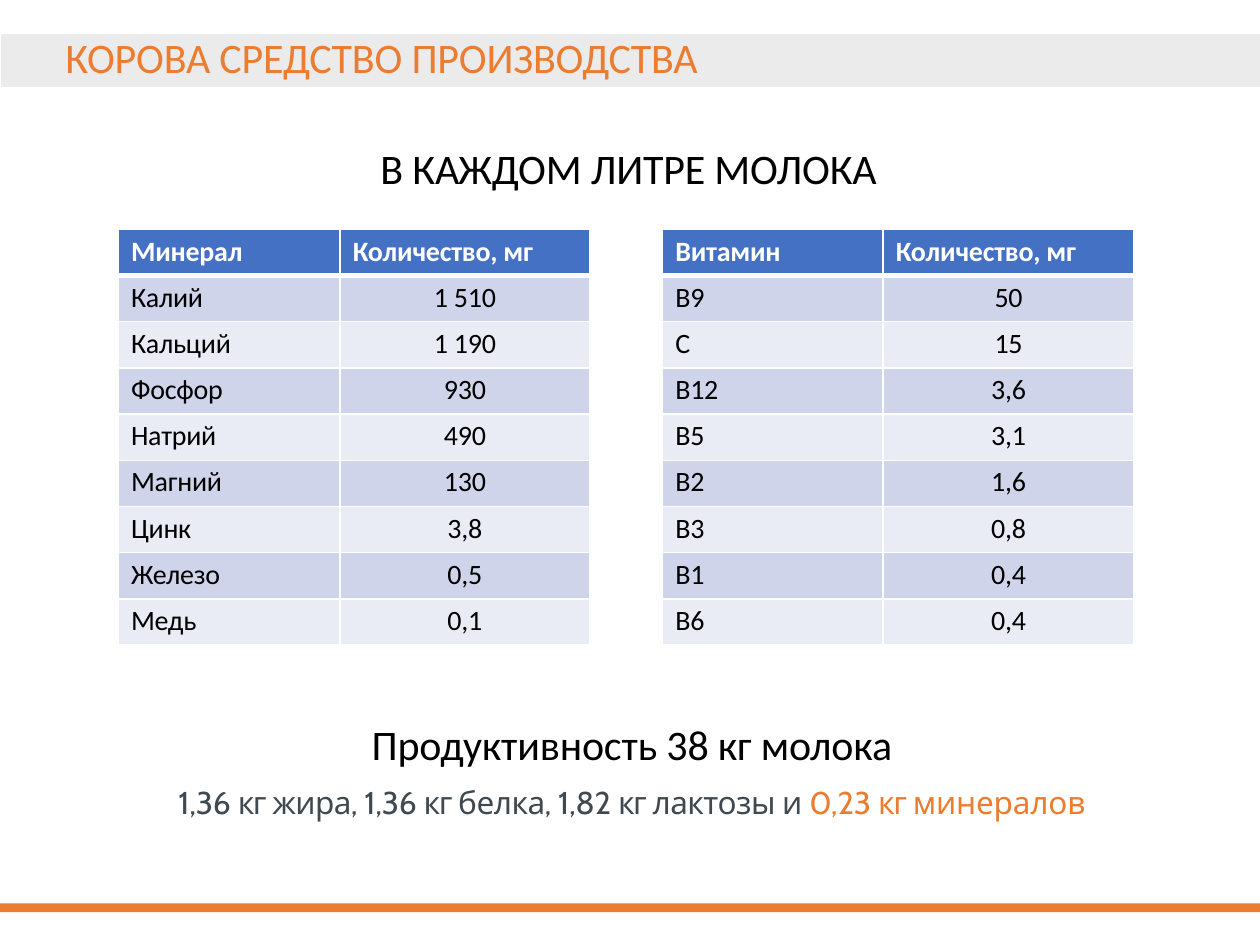
from dataclasses import dataclass

from pptx import Presentation
from pptx.dml.color import RGBColor
from pptx.enum.shapes import MSO_SHAPE
from pptx.enum.text import PP_ALIGN
from pptx.oxml.ns import qn
from pptx.util import Inches, Pt
from lxml.etree import SubElement


@dataclass(frozen=True)
class Theme:
    accent: str = "EC7C30"
    band: str = "EBEBEB"
    header: str = "4471C4"
    odd_row: str = "CFD4EA"
    even_row: str = "E9EBF5"
    white: str = "FFFFFF"
    black: str = "000000"
    muted: str = "414950"
    font: str = "Calibri"
    note_font: str = "Cabin"
    heading_size: float = 24
    note_size: float = 18
    table_size: float = 16


THEME = Theme()

MINERALS = [
    ("Минерал", "Количество, мг"),
    ("Калий", "1 510"),
    ("Кальций", "1 190"),
    ("Фосфор", "930"),
    ("Натрий", "490"),
    ("Магний", "130"),
    ("Цинк", "3,8"),
    ("Железо", "0,5"),
    ("Медь", "0,1"),
]
VITAMINS = [
    ("Витамин", "Количество, мг"),
    ("В9", "50"),
    ("С", "15"),
    ("В12", "3,6"),
    ("В5", "3,1"),
    ("В2", "1,6"),
    ("В3", "0,8"),
    ("В1", "0,4"),
    ("В6", "0,4"),
]
COMPOSITION = [
    ("1,36 ", "жира, "),
    ("1,36 ", "белка, "),
    ("1,82 ", "лактозы "),
]


def add_run(paragraph, text, *, size=THEME.heading_size, font=THEME.font,
            color=THEME.black, bold=False, spacing=-0.1):
    run = paragraph.add_run()
    run.text = text
    run.font.size = Pt(size)
    run.font.name = font
    run.font.bold = bold
    run.font.color.rgb = RGBColor.from_string(color)
    run.font._element.set("spc", str(round(spacing * 100)))


def add_text_frame(slide, left, top, width, height, *, inset_left=0, inset_top=0.01):
    frame = slide.shapes.add_textbox(
        Inches(left), Inches(top), Inches(width), Inches(height)).text_frame
    frame.word_wrap = True
    frame.margin_left, frame.margin_top = Inches(inset_left), Inches(inset_top)
    frame.margin_right = frame.margin_bottom = 0
    return frame


def add_band(slide, left, top, width, height, color):
    band = slide.shapes.add_shape(
        MSO_SHAPE.RECTANGLE, Inches(left), Inches(top), Inches(width), Inches(height))
    band.shadow.inherit = False
    band.fill.solid()
    band.fill.fore_color.rgb = RGBColor.from_string(color)
    band.line.fill.background()


def add_heading(slide, left, top, width, height, text, color):
    frame = add_text_frame(slide, left, top, width, height, inset_left=0.01)
    heading = frame.paragraphs[0]
    heading.space_before = Pt(1)
    add_run(heading, text, color=color)


def add_header(slide, left, top, width, height):
    add_band(slide, left, top, width, height, THEME.band)
    add_heading(slide, left + 0.5, top - 0.03, 5.08, 0.43,
                "КОРОВА СРЕДСТВО ПРОИЗВОДСТВА", THEME.accent)


def set_borders(cell, *, top=1, bottom=1):
    properties = cell._tc.get_or_add_tcPr()
    for side, width in (("L", 1), ("R", 1), ("T", top), ("B", bottom)):
        border = SubElement(properties, qn(f"a:ln{side}"), w=str(Pt(width)))
        fill = SubElement(border, qn("a:solidFill"))
        SubElement(fill, qn("a:srgbClr"), val=THEME.white)


def fill_cell(cell, text, *, row, centered):
    is_header = row == 0
    set_borders(cell, top=3 if row == 1 else 1, bottom=3 if is_header else 1)
    fill = THEME.header if is_header else (THEME.even_row, THEME.odd_row)[row % 2]
    cell.fill.solid()
    cell.fill.fore_color.rgb = RGBColor.from_string(fill)
    cell.margin_left = 0 if centered else Inches(0.1)
    cell.margin_right = cell.margin_bottom = 0
    cell.margin_top = Inches(0.04)
    paragraph = cell.text_frame.paragraphs[0]
    paragraph.alignment = PP_ALIGN.CENTER if centered else PP_ALIGN.LEFT
    paragraph.space_before = Pt(2.6)
    add_run(paragraph, text, size=THEME.table_size, bold=is_header,
            color=THEME.white if is_header else THEME.black)


def add_nutrient_table(slide, left, top, width, height, rows, name_width):
    table = slide.shapes.add_table(
        len(rows), 2, Inches(left), Inches(top), Inches(width), Inches(height)).table
    table.columns[0].width = Inches(name_width)
    table.columns[1].width = Inches(width - name_width)
    for row, values in enumerate(rows):
        for column, text in enumerate(values):
            fill_cell(table.cell(row, column), text, row=row,
                      centered=row > 0 and column == 1)


def add_productivity(slide, left, top, width, height):
    frame = add_text_frame(slide, left, top, width, height, inset_top=0.17)
    yield_line = frame.paragraphs[0]
    yield_line.space_before = Pt(11.9)
    add_run(yield_line, "Продуктивность 38 кг молока")

    composition = frame.add_paragraph()
    composition.space_before = Pt(8.2)
    note = {"size": THEME.note_size, "font": THEME.note_font}
    for amount, substance in COMPOSITION:
        add_run(composition, amount, color=THEME.muted, **note)
        add_run(composition, "кг ", color=THEME.muted, spacing=-0.8, **note)
        add_run(composition, substance, color=THEME.muted, spacing=-0.3, **note)
    add_run(composition, "и ", color=THEME.muted, **note)
    add_run(composition, "0,23 ", color=THEME.accent, **note)
    add_run(composition, "кг ", color=THEME.accent, spacing=-0.7, **note)
    add_run(composition, "минералов", color=THEME.accent, **note)
    for paragraph in frame.paragraphs:
        paragraph.alignment = PP_ALIGN.CENTER


def main():
    presentation = Presentation()
    presentation.slide_width, presentation.slide_height = Inches(10), Inches(7.5)
    slide = presentation.slides.add_slide(presentation.slide_layouts[6])
    add_header(slide, 0.01, 0.27, 9.99, 0.42)
    add_band(slide, 0, 7.17, 10, 0.07, THEME.accent)
    add_nutrient_table(slide, 0.94, 1.82, 3.74, 3.3, MINERALS, 1.76)
    add_nutrient_table(slide, 5.26, 1.82, 3.74, 3.3, VITAMINS, 1.75)
    add_heading(slide, 3.01, 1.12, 3.99, 0.43, "В КАЖДОМ ЛИТРЕ МОЛОКА", THEME.black)
    add_productivity(slide, 1.33, 5.53, 7.37, 0.99)
    presentation.save("out.pptx")


if __name__ == "__main__":
    main()
